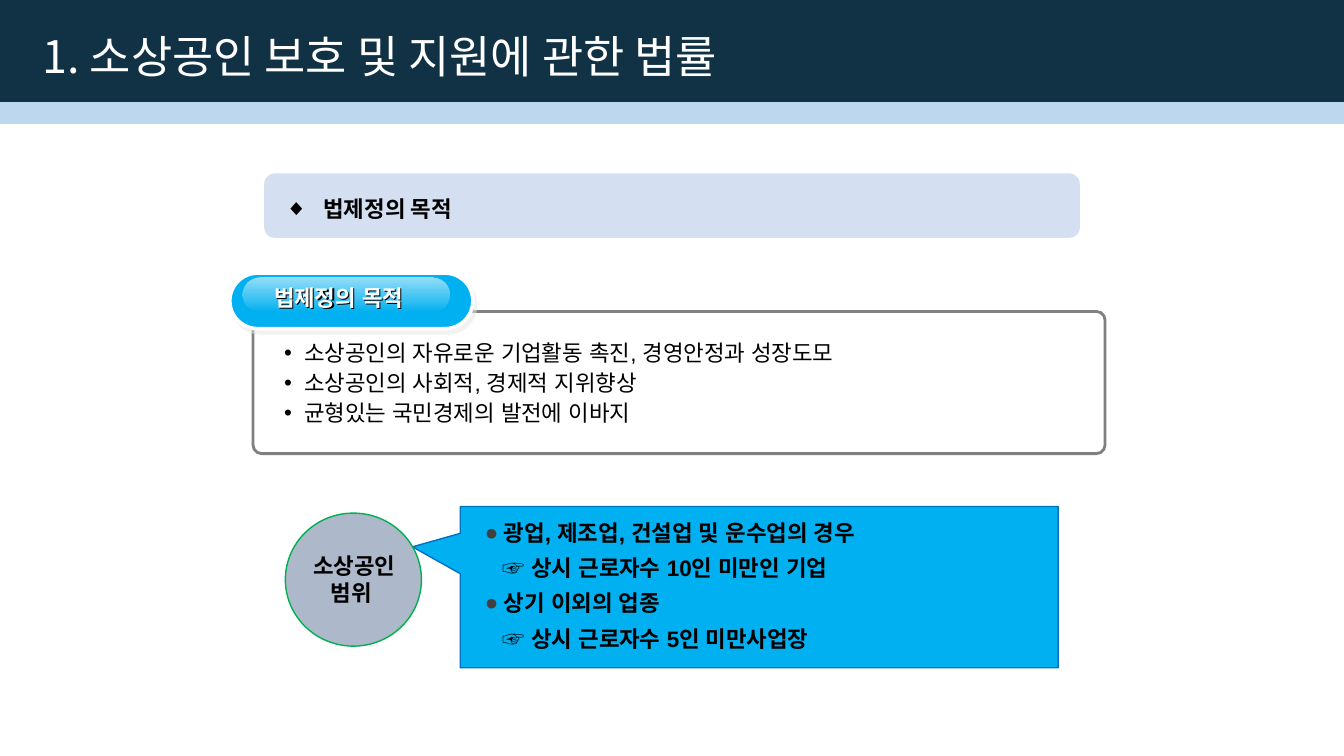
from lxml.etree import SubElement
from pptx import Presentation
from pptx.dml.color import RGBColor
from pptx.enum.shapes import MSO_SHAPE
from pptx.enum.text import MSO_ANCHOR, MSO_AUTO_SIZE, PP_ALIGN
from pptx.oxml.ns import qn
from pptx.util import Pt

PX = 9144  # 100 px to the inch

WHITE = RGBColor(0xFF, 0xFF, 0xFF)
BLACK = RGBColor(0x00, 0x00, 0x00)
NAVY = RGBColor(0x11, 0x32, 0x45)
PALE_BLUE = RGBColor(0xBD, 0xD7, 0xEE)
LAVENDER = RGBColor(0xB4, 0xC7, 0xE7)
SKY = RGBColor(0x00, 0xB0, 0xF0)
BLUE = RGBColor(0x00, 0x70, 0xC0)
SLATE = RGBColor(0xAD, 0xB9, 0xCA)
GREEN = RGBColor(0x00, 0xB0, 0x50)
GRAY = RGBColor(0x80, 0x80, 0x80)
DARK_GRAY = RGBColor(0x40, 0x40, 0x40)
SHADOW_GRAY = RGBColor(0xE7, 0xE6, 0xE6)

NOTO = "Noto Sans CJK KR"
ARIAL = "Arial"


def child(parent, tag, **attributes):
    return SubElement(parent, qn(tag), {k: str(v) for k, v in attributes.items()})


def set_alpha(element, percent):
    """Make the colour inside an element partly transparent."""
    colour = next(element.iter(qn("a:srgbClr")))
    child(colour, "a:alpha", val=percent * 1000)


class SlideBuilder:
    def __init__(self, slide, size=16):
        self.slide = slide
        self.size = size

    def shape(self, kind, box, fill, line=None, width=1, alpha=None, adjust=(), rotation=0):
        item = self.slide.shapes.add_shape(kind, *(n * PX for n in box))
        item.shadow.inherit = False
        item.rotation = rotation
        for index, value in enumerate(adjust):
            item.adjustments[index] = value
        item.fill.solid()
        item.fill.fore_color.rgb = fill
        if alpha is not None:
            set_alpha(item.element.spPr.find(qn("a:solidFill")), alpha)
        if line is None:
            item.line.fill.background()
        else:
            item.line.color.rgb = line
            item.line.width = Pt(width)
        return item

    def gloss(self, item, top_alpha):
        """Fade white from the top edge to nothing at the bottom."""
        item.fill.gradient()
        item.fill.gradient_angle = 270
        stops = item.element.spPr.find(qn("a:gradFill")).findall(".//" + qn("a:gs"))
        for stop, element, alpha in zip(item.fill.gradient_stops, stops, (top_alpha, 0)):
            stop.color.rgb = WHITE
            set_alpha(element, alpha)

    def shadow(self, item, colour, alpha, distance, angle):
        item.shadow.inherit = False
        effects = item.element.spPr.find(qn("a:effectLst"))
        outer = child(effects, "a:outerShdw", blurRad=0, dist=Pt(distance),
                      dir=angle * 60000, algn="tl", rotWithShape=0)
        child(outer, "a:srgbClr", val=colour)
        set_alpha(outer, alpha)

    def run(self, paragraph, text, face=ARIAL, size=None, colour=BLACK, bold=False):
        run = paragraph.add_run()
        run.text = text
        run.font.name = face
        run.font.size = Pt(size or self.size)
        run.font.bold = bold
        run.font.color.rgb = colour
        child(run.font._element, "a:ea", typeface=face)

    def indent(self, paragraph, left, hanging=0, bullet=None, colour=None):
        properties = paragraph._p.get_or_add_pPr()
        properties.set("marL", str(left * PX))
        properties.set("indent", str(-hanging * PX))
        if bullet:
            if colour is not None:
                child(child(properties, "a:buClr"), "a:srgbClr", val=colour)
            child(properties, "a:buFont", typeface=ARIAL)
            child(properties, "a:buChar", char=bullet)

    def text(self, box, lines, wrap=True, align=PP_ALIGN.LEFT, spacing=None,
             before=0, after=0, indents=(), **font):
        item = self.slide.shapes.add_textbox(*(n * PX for n in box))
        frame = item.text_frame
        frame.word_wrap = wrap
        for index, line in enumerate(lines):
            paragraph = frame.paragraphs[0] if index == 0 else frame.add_paragraph()
            paragraph.alignment = align
            paragraph.line_spacing = spacing
            paragraph.space_before = Pt(before)
            paragraph.space_after = Pt(after)
            if indents:
                self.indent(paragraph, *indents[index % len(indents)])
            self.run(paragraph, line, **font)
        return item

    def title(self, box, text, **font):
        title = self.slide.shapes.title
        title.left, title.top, title.width, title.height = (n * PX for n in box)
        frame = title.text_frame
        frame.auto_size = MSO_AUTO_SIZE.NONE
        frame.word_wrap = True
        frame.vertical_anchor = MSO_ANCHOR.MIDDLE
        paragraph = frame.paragraphs[0]
        paragraph.alignment = PP_ALIGN.LEFT
        paragraph.line_spacing = 0.9
        self.run(paragraph, text, **font)
        # Lift the title above the header bands
        title.element.getparent().append(title.element)


def main():
    deck = Presentation()
    deck.slide_width, deck.slide_height = 1333 * PX, 750 * PX
    page = SlideBuilder(deck.slides.add_slide(deck.slide_layouts[5]))
    rounded = MSO_SHAPE.ROUNDED_RECTANGLE

    # Header bands and title
    page.shape(MSO_SHAPE.RECTANGLE, (0, 100, 1333, 23), PALE_BLUE)
    page.shape(MSO_SHAPE.RECTANGLE, (0, 0, 1333, 101), NAVY)
    page.title((32, 6, 894, 105), "1. 소상공인 보호 및 지원에 관한 법률",
               face=NOTO, size=32, colour=WHITE)

    # Section heading
    page.shape(rounded, (262, 172, 809, 64), LAVENDER, alpha=56)
    page.text((273, 192, 800, 35), ["법제정의 목적"], spacing=0.9,
              indents=[(38, 38, "◆")], face=NOTO, bold=True)

    # Scope of small businesses: callout and circle
    page.shape(MSO_SHAPE.RECTANGULAR_CALLOUT, (673, 286, 160, 593), SKY, BLUE,
               adjust=(-0.25, 0.58), rotation=90)
    page.shape(MSO_SHAPE.OVAL, (283, 509, 135, 132), SLATE, GREEN)

    # Purpose panel with its glossy label
    page.shape(rounded, (251, 309, 845, 141), WHITE, GRAY, width=2, alpha=50, adjust=(0.06,))
    label = page.shape(rounded, (228, 271, 241, 55), SKY, WHITE, width=2.5, adjust=(0.5,))
    page.shadow(label, SHADOW_GRAY, 50, 3.6, 56)
    highlight = page.shape(rounded, (241, 275, 205, 34), WHITE, adjust=(0.5,))
    page.gloss(highlight, 60)
    label_text = page.text((262, 277, 163, 37), ["법제정의 목적"], wrap=False,
                           colour=WHITE, bold=True)
    page.shadow(label_text, BLACK, 100, 1.4, 45)
    page.text((272, 332, 835, 96),
              ["소상공인의 자유로운 기업활동 촉진, 경영안정과 성장도모",
               "소상공인의 사회적, 경제적 지위향상",
               "균형있는 국민경제의 발전에 이바지"],
              after=2, indents=[(20, 20, "•")])

    # Scope text: each industry is followed by its headcount limit
    page.text((471, 510, 564, 143),
              ["광업, 제조업, 건설업 및 운수업의 경우",
               "☞ 상시 근로자수 10인 미만인 기업",
               "상기 이외의 업종",
               "☞ 상시 근로자수 5인 미만사업장"],
              before=6, indents=[(19, 19, "●", DARK_GRAY), (18,)], bold=True)
    page.text((272, 543, 153, 64), [" 소상공인", "범위"], align=PP_ALIGN.CENTER, bold=True)

    deck.save("out.pptx")


if __name__ == "__main__":
    main()
